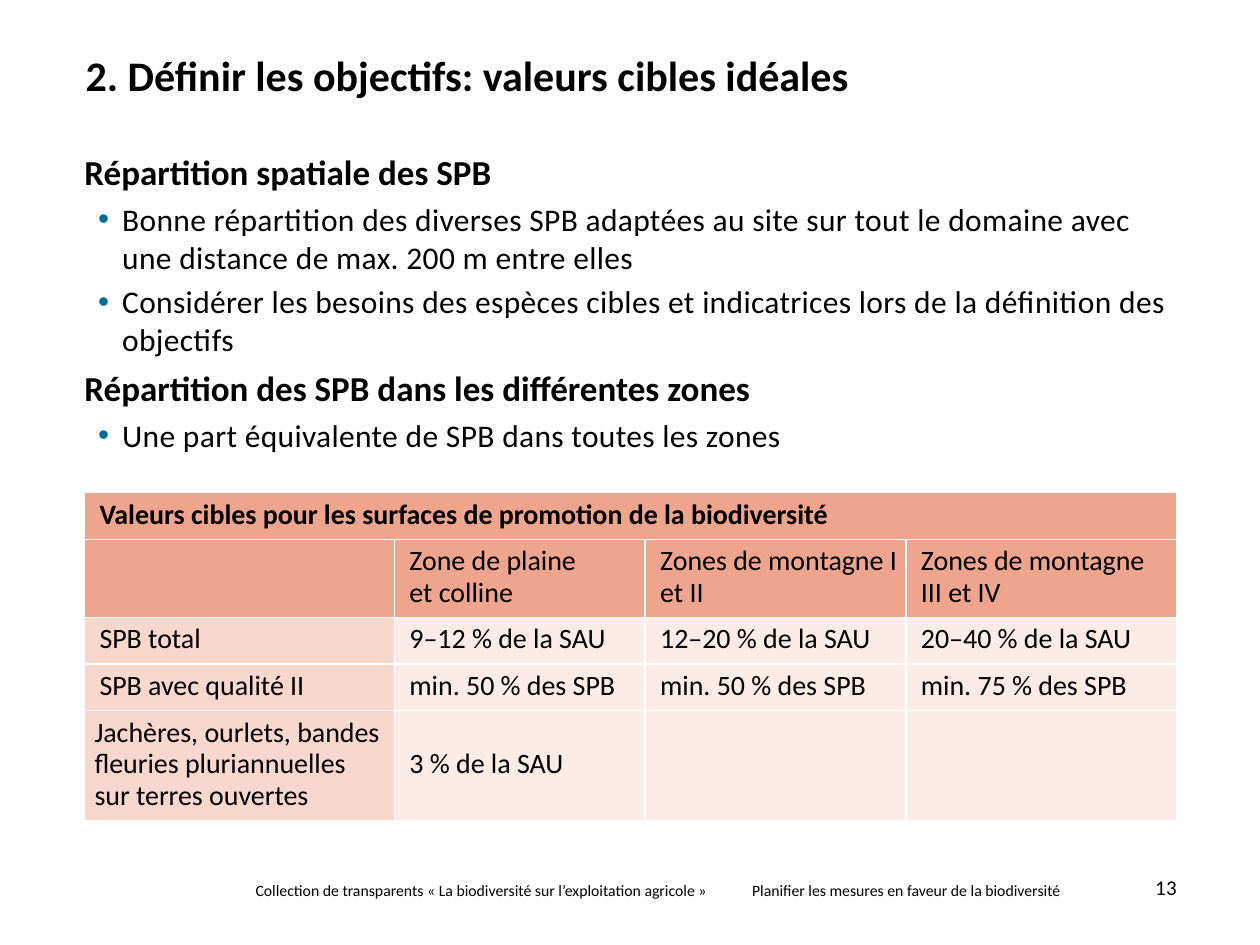
from lxml.etree import fromstring as xml
from pptx import Presentation
from pptx.dml.color import RGBColor as Rgb
from pptx.enum.text import MSO_ANCHOR as Anchor, PP_ALIGN as Align
from pptx.util import Inches, Pt

NS = 'xmlns:a="http://schemas.openxmlformats.org/drawingml/2006/main"'
deck = Presentation()
deck.slide_width, deck.slide_height = Inches(10), Inches(7.5)
unit = deck.slide_width / 100
slide = deck.slides.add_slide(deck.slide_layouts[6])


def style(para, text, size, bold=False, track=0):
    para.text = text
    font = para.font
    font.name, font.size, font.bold = "Calibri", Pt(size), bold
    font.color.rgb = Rgb.from_string("000000")
    if track:
        for run in para.runs:
            run._r.get_or_add_rPr().set("spc", str(track))


def frame(box, pads):
    body = slide.shapes.add_textbox(*[round(n * unit) for n in box]).text_frame
    body.word_wrap = True
    sides = [round(n * unit) for n in pads]
    body.margin_left, body.margin_top, body.margin_right, body.margin_bottom = sides
    return body


notes = [
    ("Collection de transparents « La biodiversité sur l’exploitation agricole »", 19.3, 38.6),
    ("Planifier les mesures en faveur de la biodiversité", 58.7, 26.8),
]
for text, left, width in notes:
    foot = frame((left, 69.4, width, 2.5), (1, 0.5, 1, 0.5))
    style(foot.paragraphs[0], text, 9)

title = frame((6.8, 4.4, 86.5, 6.9), (0, 0, 0, 0)).paragraphs[0]
title.line_spacing = 0.9
style(title, "2. Définir les objectifs: valeurs cibles idéales", 24, True)

body = frame((6.7, 12.3, 86.6, 25.5), (0, 0, 0, 0))
lines = [
    (True, "Répartition spatiale des SPB"),
    (False, "Bonne répartition des diverses SPB adaptées au site sur tout le domaine avec une distance de max. 200 m entre elles"),
    (False, "Considérer les besoins des espèces cibles et indicatrices lors de la définition des objectifs"),
    (True, "Répartition des SPB dans les différentes zones"),
    (False, "Une part équivalente de SPB dans toutes les zones"),
]
for i, (head, text) in enumerate(lines):
    para = body.add_paragraph() if i else body.paragraphs[0]
    if head:
        para.line_spacing = 0.9
    else:
        prop = para._p.get_or_add_pPr()
        prop.set("marL", str(Inches(0.3)))
        prop.set("indent", str(Inches(-0.19)))
        prop.append(xml(f'<a:buClr {NS}><a:srgbClr val="006C8E"/></a:buClr>'))
        prop.append(xml(f'<a:buFont {NS} typeface="Arial"/>'))
        prop.append(xml(f'<a:buChar {NS} char="•"/>'))
    if i:
        para.space_before = Pt(7.5 if head else 4)
    style(para, text, 20 if head else 18, head, 0 if head else 20)

page = frame((84.7, 68, 8.7, 3.9), (0, 0.5, 0, 0.5))
page.vertical_anchor = Anchor.BOTTOM
page.paragraphs[0].alignment = Align.RIGHT
style(page.paragraphs[0], "13", 12, track=20)

rows = [
    ["Valeurs cibles pour les surfaces de promotion de la biodiversité", "", "", ""],
    ["", "Zone de plaine\vet colline", "Zones de montagne I et II", "Zones de montagne III et IV"],
    ["SPB total", "9–12 % de la SAU", "12–20 % de la SAU", "20–40 % de la SAU"],
    ["SPB avec qualité II", "min. 50 % des SPB", "min. 50 % des SPB", "min. 75 % des SPB"],
    ["Jachères, ourlets, bandes fleuries pluriannuelles sur terres ouvertes", "3 % de la SAU", "", ""],
]
wide = [24.6, 19.9, 20.7, 21.5]
high = [3.6, 6.1, 3.6, 3.6, 8.6]
area = [round(n * unit) for n in (6.7, 39.1, sum(wide), sum(high))]
table = slide.shapes.add_table(len(rows), len(wide), *area).table
table.first_row = table.horz_banding = False
for col, size in zip(table.columns, wide):
    col.width = round(size * unit)
for row, size in zip(table.rows, high):
    row.height = round(size * unit)
for r, row in enumerate(rows):
    for c, text in enumerate(row):
        cell = table.cell(r, c)
        cell.vertical_anchor = Anchor.MIDDLE
        cell.margin_left = Inches(0.08 if (r, c) == (4, 0) else 0.12)
        cell.margin_top = cell.margin_right = cell.margin_bottom = Inches(0.06)
        cell.fill.solid()
        tint = "EFA48D" if r < 2 else "FCECE8" if c else "F8D7CD"
        cell.fill.fore_color.rgb = Rgb.from_string(tint)
        for i, side in enumerate("LRTB"):
            edge = f'<a:ln{side} {NS} w="12700"><a:solidFill><a:srgbClr val="FFFFFF"/></a:solidFill></a:ln{side}>'
            cell._tc.get_or_add_tcPr().insert(i, xml(edge))
        para = cell.text_frame.paragraphs[0]
        para.line_spacing = Pt(18)
        style(para, text, 16, r == 0)
table.cell(0, 0).merge(table.cell(0, 3))

deck.save("out.pptx")
